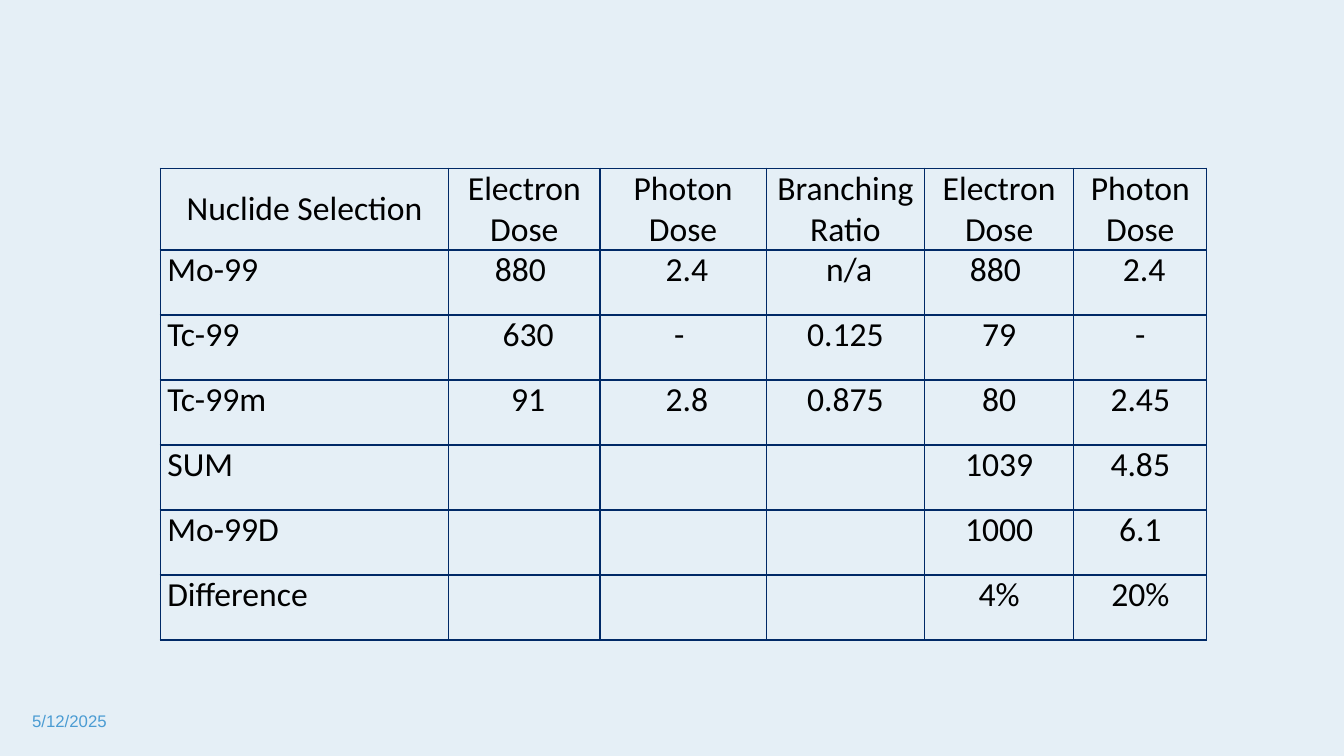
from lxml import etree
from pptx import Presentation
from pptx.dml.color import RGBColor
from pptx.enum import text
from pptx.oxml import ns
from pptx.util import Inches, Pt

BACKGROUND = RGBColor(0xE5, 0xEF, 0xF6)
BORDER = RGBColor(0x00, 0x29, 0x66)
BLACK = RGBColor(0, 0, 0)
DATE_BLUE = RGBColor(0x4B, 0x9C, 0xD3)

COLUMN_WIDTHS = [2.86, 1.5, 1.65, 1.57, 1.48, 1.32]
HEADER_HEIGHT = 0.81
BODY_HEIGHT = 3.87
DOSES = [
    ["Nuclide Selection", "Electron Dose", "Photon Dose", "Branching Ratio", "Electron Dose", "Photon Dose"],
    ["Mo-99", "880 ", " 2.4", " n/a", "880 ", " 2.4"],
    ["Tc-99", " 630", "- ", "0.125", "79", "-"],
    ["Tc-99m", " 91", " 2.8", "0.875", "80", "2.45"],
    ["SUM", "", "", "", "1039", "4.85"],
    ["Mo-99D", "", "", "", "1000", "6.1"],
    ["Difference", "", "", "", "4%", "20%"],
]


def write_text(frame, wording, size, font, color, align):
    paragraph = frame.paragraphs[0]
    paragraph.alignment = align
    paragraph.font.size = Pt(size)
    if wording:
        run = paragraph.add_run()
        run.text = wording
        run.font.size = Pt(size)
        run.font.name = font
        run.font.color.rgb = color


def add_borders(cell):
    properties = cell._tc.get_or_add_tcPr()
    for side in ("lnL", "lnR", "lnT", "lnB"):
        line = etree.SubElement(properties, ns.qn(f"a:{side}"), w=str(Pt(1)))
        fill = etree.SubElement(line, ns.qn("a:solidFill"))
        etree.SubElement(fill, ns.qn("a:srgbClr"), val=str(BORDER))


presentation = Presentation()
presentation.slide_width = Inches(13.33)
presentation.slide_height = Inches(7.5)
slide = presentation.slides.add_slide(presentation.slide_layouts[6])
slide.background.fill.solid()
slide.background.fill.fore_color.rgb = BACKGROUND

# Date
date_box = slide.shapes.add_textbox(Inches(0.22), Inches(6.95), Inches(3), Inches(0.4))
date_box.text_frame.word_wrap = True
date_box.text_frame.vertical_anchor = text.MSO_ANCHOR.MIDDLE
write_text(date_box.text_frame, "5/12/2025", size=12, font="Arial", color=DATE_BLUE,
           align=text.PP_ALIGN.LEFT)

# Dose table
table = slide.shapes.add_table(
    len(DOSES), len(COLUMN_WIDTHS), Inches(1.59), Inches(1.67),
    Inches(sum(COLUMN_WIDTHS)), Inches(HEADER_HEIGHT + BODY_HEIGHT)).table
table.horz_banding = False
table.first_row = False
for column, width in zip(table.columns, COLUMN_WIDTHS):
    column.width = Inches(width)

for row_index, values in enumerate(DOSES):
    is_header = row_index == 0
    table.rows[row_index].height = Inches(HEADER_HEIGHT if is_header else BODY_HEIGHT / (len(DOSES) - 1))
    for column_index, value in enumerate(values):
        cell = table.cell(row_index, column_index)
        add_borders(cell)
        cell.fill.background()
        cell.margin_left = cell.margin_right = Inches(0.07)
        cell.margin_top = cell.margin_bottom = 0
        cell.vertical_anchor = text.MSO_ANCHOR.MIDDLE if is_header else text.MSO_ANCHOR.TOP
        is_nuclide = column_index == 0 and not is_header
        write_text(cell.text_frame, value, size=24, font="Calibri", color=BLACK,
                   align=text.PP_ALIGN.JUSTIFY if is_nuclide else text.PP_ALIGN.CENTER)

presentation.save("out.pptx")
